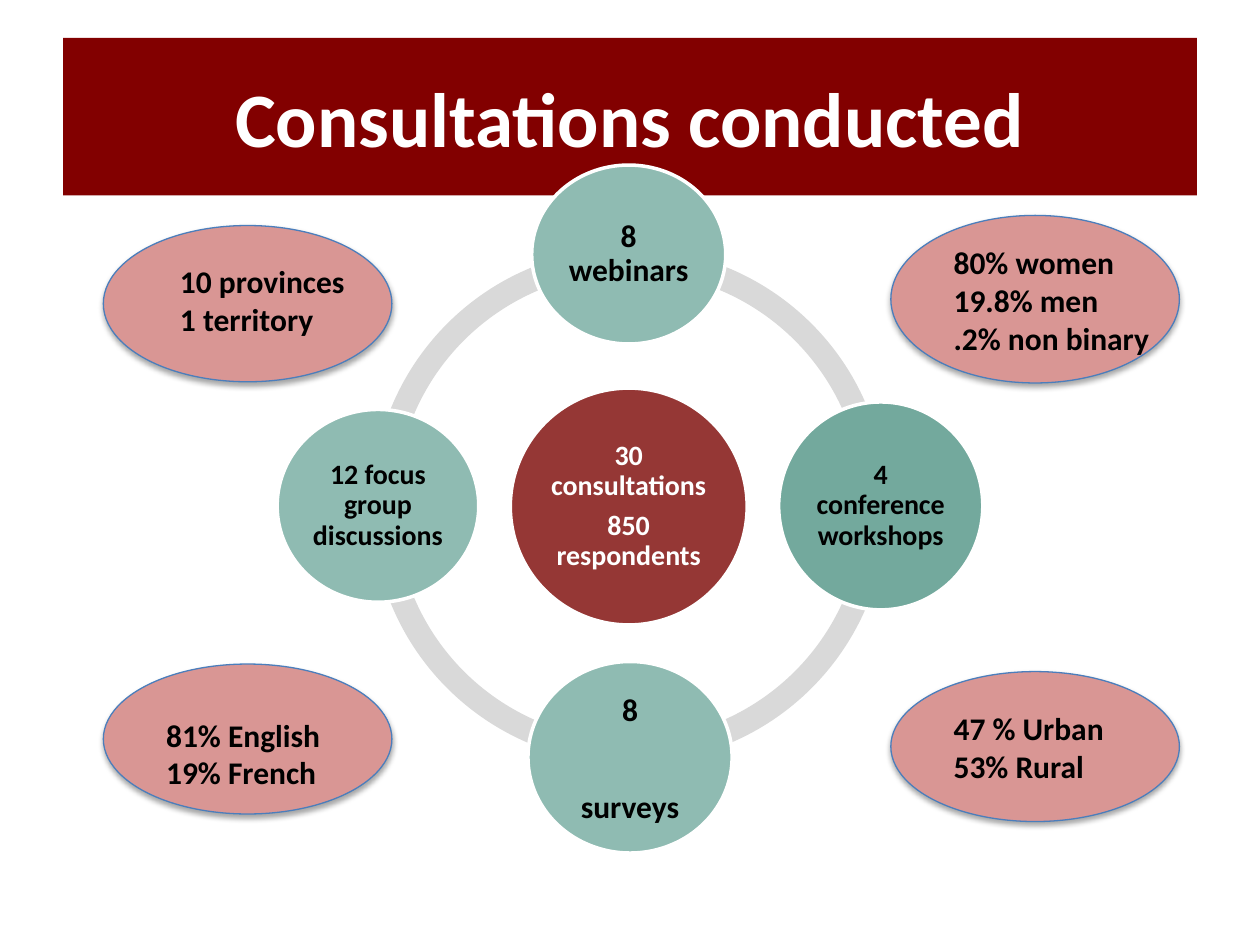
"""Build the slide summarising the consultations conducted."""
from lxml import etree
from pptx import Presentation
from pptx import util as u
from pptx.dml.color import RGBColor
from pptx.enum import shapes, text
from pptx.oxml.ns import qn

COLORS = {"banner": "820000", "ring": "D9D9D9", "hub": "953735", "light": "8FBBB2",
          "dark": "73A99D", "pink": "D99694", "outline": "4B7EBC",
          "white": "FFFFFF", "black": "000000"}
FONT = "Calibri"
TITLE = "Consultations conducted"
RING = (2.95, 1.97, 4.09, 4.09)
QUARTER = 54
RING_THICKNESS = 0.046

# box, fill, text colour, size, inset, line spacing, gap between paragraphs, paragraphs
CIRCLES = [
    ((4.05, 3.08, 1.88, 1.88), "hub", "white", 16, 0.02, 0.9, 5.6,
     ["30 consultations", "850 respondents"]),
    ((4.22, 1.31, 1.54, 1.42), "light", "black", 18, 0.03, 0.9, 0, ["8 webinars"]),
    ((6.18, 3.19, 1.62, 1.65), "dark", "black", 16, 0.02, 0.9, 0,
     ["4 conference workshops"]),
    ((4.19, 5.25, 1.62, 1.52), "light", "black", 18, 0.03, 1, 34, ["8", "surveys"]),
    ((2.2, 3.25, 1.6, 1.53), "light", "black", 16, 0.02, 0.9, 0,
     ["12 focus group discussions"]),
]
# oval box, text box, lines
FACTS = [
    ((0.82, 1.79, 2.29, 1.24), (1.33, 2.03, 1.78, 1.01), ["10 provinces", "1 territory"]),
    ((7.07, 1.71, 2.29, 1.33), (7.47, 1.88, 1.8, 1.01),
     ["80% women", "19.8% men", ".2% non binary"]),
    ((0.82, 5.27, 2.29, 1.19), (1.22, 5.63, 1.63, 0.71), ["81% English", "19% French"]),
    ((7.07, 5.33, 2.29, 1.19), (7.47, 5.58, 1.64, 0.71), ["47 % Urban", "53% Rural"]),
]


def rgb(name):
    return RGBColor.from_string(COLORS[name])


def inches(box):
    return [u.Inches(v) for v in box]


def add_filled(s, kind, box, fill, line=None, width=0):
    sp = s.shapes.add_shape(kind, *inches(box))
    sp.shadow.inherit = False
    sp.fill.solid()
    sp.fill.fore_color.rgb = rgb(fill)
    if line:
        sp.line.color.rgb = rgb(line)
        sp.line.width = u.Pt(width)
    else:
        sp.line.fill.background()
    return sp


def write(tf, lines, size, color, align, spacing=None, gap=0):
    tf.word_wrap = True
    for i, line in enumerate(lines):
        p = tf.add_paragraph() if i else tf.paragraphs[0]
        p.alignment = align
        if spacing:
            p.line_spacing = spacing
        if i and gap:
            p.space_before = u.Pt(gap)
        r = p.add_run()
        r.text = line
        r.font.name = FONT
        r.font.size = u.Pt(size)
        r.font.bold = True
        r.font.color.rgb = rgb(color)


def add_shadow(sp):
    effects = sp._element.spPr.find(qn("a:effectLst"))
    shadow = etree.SubElement(effects, qn("a:outerShdw"), blurRad="40000", dist="23000",
                              dir="5400000", rotWithShape="0")
    color = etree.SubElement(shadow, qn("a:srgbClr"), val=COLORS["black"])
    etree.SubElement(color, qn("a:alpha"), val="35000")


def main():
    prs = Presentation()
    prs.slide_width, prs.slide_height = u.Inches(10), u.Inches(7.5)
    s = prs.slides.add_slide(prs.slide_layouts[5])
    center, left = text.PP_ALIGN.CENTER, text.PP_ALIGN.LEFT
    oval = shapes.MSO_SHAPE.OVAL

    title = s.shapes.title
    title.left, title.top, title.width, title.height = inches((0.5, 0.3, 9, 1.25))
    title.fill.solid()
    title.fill.fore_color.rgb = rgb("banner")
    title.text_frame.vertical_anchor = text.MSO_ANCHOR.MIDDLE
    write(title.text_frame, [TITLE], 44, "white", center)

    for i in range(4):
        arc = add_filled(s, shapes.MSO_SHAPE.BLOCK_ARC, RING, "ring")
        arc.adjustments[0] = i * QUARTER
        arc.adjustments[1] = (i + 1) % 4 * QUARTER
        arc.adjustments[2] = RING_THICKNESS

    for box, fill, color, size, inset, spacing, gap, lines in CIRCLES:
        tf = add_filled(s, oval, box, fill, "white", 2).text_frame
        tf.margin_left = tf.margin_right = u.Inches(inset)
        tf.margin_top = tf.margin_bottom = u.Inches(inset)
        tf.vertical_anchor = text.MSO_ANCHOR.MIDDLE
        write(tf, lines, size, color, center, spacing, gap)

    for box, _, _ in FACTS:
        add_shadow(add_filled(s, oval, box, "pink", "outline", 0.75))
    for _, box, lines in FACTS:
        tf = s.shapes.add_textbox(*inches(box)).text_frame
        write(tf, lines, 18, "black", left)

    prs.save("out.pptx")


if __name__ == "__main__":
    main()
